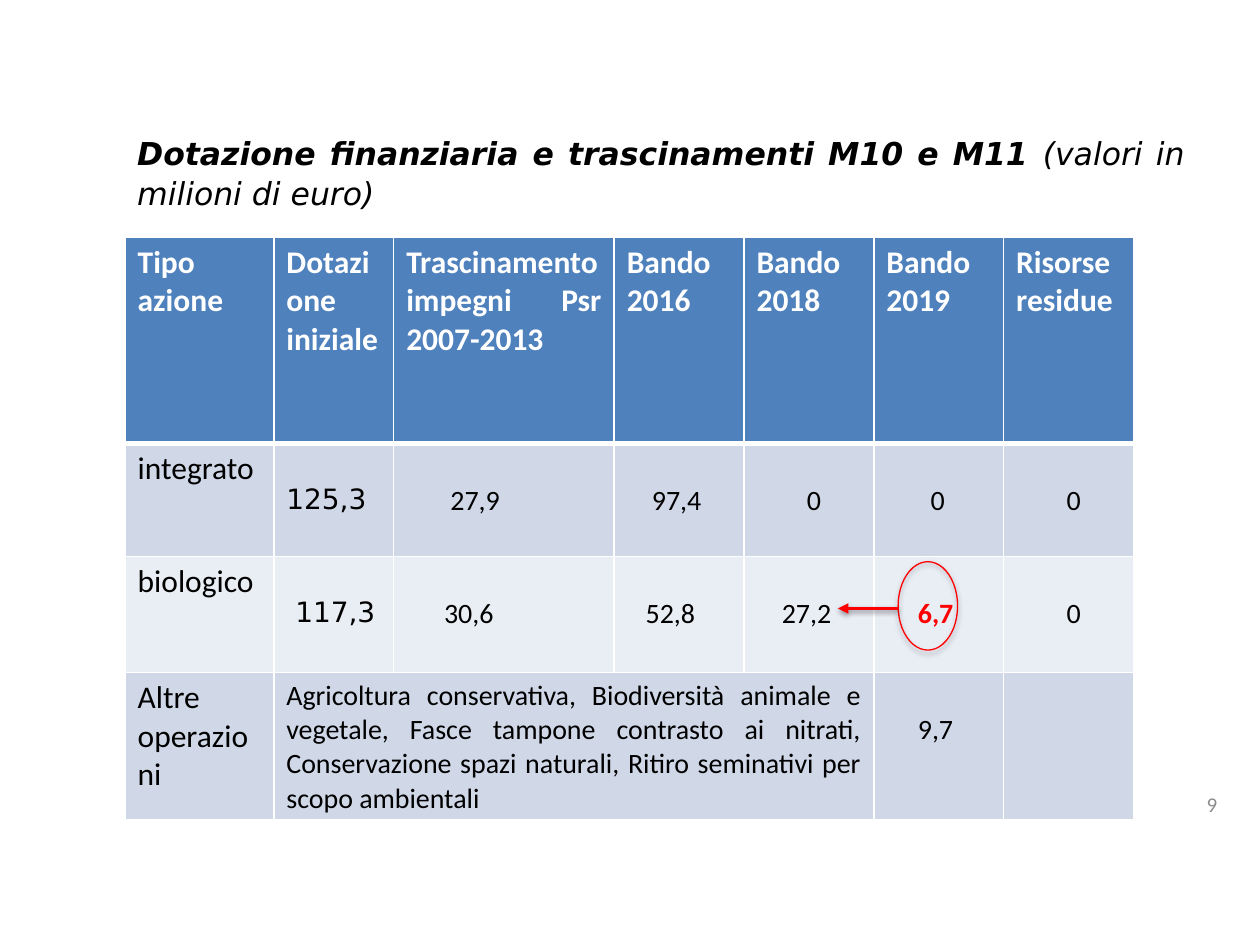
from dataclasses import dataclass
from lxml.etree import SubElement
from pptx import Presentation
from pptx.dml.color import RGBColor
from pptx.enum.shapes import MSO_CONNECTOR as Connector, MSO_SHAPE as Shape
from pptx.enum.text import MSO_ANCHOR as Anchor, PP_ALIGN as Align
from pptx.oxml import parse_xml
from pptx.oxml.ns import nsdecls, qn
from pptx.util import Pt


@dataclass(frozen=True)
class Theme:
    body: str = "Calibri"
    accent: str = "DejaVu Sans"
    black: str = "000000"
    white: str = "FFFFFF"
    grey: str = "8C8C8C"
    red: str = "FF0000"
    header: str = "4F81BD"
    bands: tuple = ("D0D8E8", "E9EDF4")
    large: int = 18
    normal: int = 16
    small: int = 12


theme = Theme()

# Content: each value is (text, indent in points)
TITLE = [("Dotazione finanziaria e trascinamenti M10 e M11 ", True),
         ("(valori in milioni di euro)", False)]
HEADERS = ["Tipo azione", "Dotazione iniziale", "Trascinamento impegni Psr 2007-2013",
           "Bando 2016", "Bando 2018", "Bando 2019", "Risorse residue"]
ACTIONS = [
    ("integrato", [("125,3", 0), ("27,9", 25.2), ("97,4", 14.4),
                   ("0", 28.8), ("0", 25.2), ("0", 28.8)]),
    ("biologico", [("117,3", 5.1), ("30,6", 21.6), ("52,8", 10.8),
                   ("27,2", 14.4), ("6,7", 18), ("0", 28.8)]),
]
OTHER_LABEL = "Altre operazioni"
OTHER_TEXT = ("Agricoltura conservativa, Biodiversità animale e vegetale, "
              "Fasce tampone contrasto ai nitrati, Conservazione spazi naturali, "
              "Ritiro seminativi per scopo ambientali")
OTHER_VALUE = ("9,7", 18)
HIGHLIGHT = "6,7"
PAGE_NUMBER = "9"

# Layout in points
TABLE_LEFT, TABLE_TOP = 71.5, 135.5
COLUMNS = [85, 68.5, 126] + [74.2] * 4
ROWS = [118, 64.5, 66.3, 84]
CELL_MARGIN = 7.2
VALUE_TOP = 23  # values sit on the second line of their cell


def add_span(para, text, size, color=theme.black, font=theme.body, bold=False, italic=False):
    span = para.add_run()
    span.text = text
    span.font.size, span.font.name = Pt(size), font
    span.font.bold, span.font.italic = bold, italic
    span.font.color.rgb = RGBColor.from_string(color)


def add_box(page, left, top, width, height, align):
    frame = page.shapes.add_textbox(Pt(left), Pt(top), Pt(width), Pt(height)).text_frame
    frame.word_wrap = True
    frame.paragraphs[0].alignment = align
    return frame


def set_borders(cell, top, bottom):
    props = cell._tc.get_or_add_tcPr()
    sides = [("L", 1), ("R", 1), ("T", top), ("B", bottom)]
    for index, (side, width) in enumerate(sides):
        props.insert(index, parse_xml(
            f'<a:ln{side} {nsdecls("a")} w="{Pt(width)}"><a:solidFill>'
            f'<a:srgbClr val="{theme.white}"/></a:solidFill></a:ln{side}>'))


def write_cell(cell, text, size, **style):
    para = cell.text_frame.paragraphs[0]
    para.alignment = Align.JUSTIFY
    add_span(para, text, size, **style)


def write_value(cell, value, font=theme.body):
    text, indent = value
    cell.margin_left, cell.margin_top = Pt(CELL_MARGIN + indent), Pt(VALUE_TOP)
    marked = text == HIGHLIGHT
    write_cell(cell, text, theme.normal, font=font, bold=marked,
               color=theme.red if marked else theme.black)


def style_mark(mark, width, opacity, distance):
    """Red outline with a soft shadow below."""
    mark.line.color.rgb = RGBColor.from_string(theme.red)
    mark.line.width = Pt(width)
    mark._element.spPr.append(parse_xml(
        f'<a:effectLst {nsdecls("a")}><a:outerShdw blurRad="{Pt(3.1)}" '
        f'dist="{Pt(distance)}" dir="5400000" rotWithShape="0">'
        f'<a:srgbClr val="{theme.black}"><a:alpha val="{opacity * 1000}"/></a:srgbClr>'
        f'</a:outerShdw></a:effectLst>'))


def add_table(page):
    table = page.shapes.add_table(len(ROWS), len(COLUMNS), Pt(TABLE_LEFT), Pt(TABLE_TOP),
                                  Pt(sum(COLUMNS)), Pt(sum(ROWS))).table
    for column, width in zip(table.columns, COLUMNS):
        column.width = Pt(width)
    for index, (row, height) in enumerate(zip(table.rows, ROWS)):
        row.height = Pt(height)
        color = theme.bands[(index - 1) % 2] if index else theme.header
        for cell in row.cells:
            cell.fill.solid()
            cell.fill.fore_color.rgb = RGBColor.from_string(color)
            set_borders(cell, 3 if index == 1 else 1, 3 if index == 0 else 1)

    # Header and the two main actions
    for index, text in enumerate(HEADERS):
        write_cell(table.cell(0, index), text, theme.large, color=theme.white, bold=True)
    for row, (label, values) in enumerate(ACTIONS, 1):
        write_cell(table.cell(row, 0), label, theme.large)
        for column, value in enumerate(values, 1):
            write_value(table.cell(row, column), value,
                        theme.accent if column == 1 else theme.body)

    # Other operations, with a merged description
    last = len(ROWS) - 1
    write_cell(table.cell(last, 0), OTHER_LABEL, theme.large)
    table.cell(last, 1).merge(table.cell(last, 4))
    write_cell(table.cell(last, 1), OTHER_TEXT, theme.normal)
    write_value(table.cell(last, 5), OTHER_VALUE)


def add_highlight(page):
    left, top, width, height = 513.2, 321, 34, 50.5
    ring = page.shapes.add_shape(Shape.OVAL, Pt(left), Pt(top), Pt(width), Pt(height))
    ring.fill.background()
    style_mark(ring, 0.75, 35, 1.8)

    arrow_y = 347.7
    arrow = page.shapes.add_connector(Connector.STRAIGHT, Pt(left), Pt(arrow_y),
                                      Pt(left - 34.4), Pt(arrow_y))
    style_mark(arrow, 2, 38, 1.6)
    SubElement(arrow.line._get_or_add_ln(), qn("a:tailEnd"), type="triangle")


def main():
    deck = Presentation()
    deck.slide_width, deck.slide_height = Pt(720), Pt(540)
    page = deck.slides.add_slide(deck.slide_layouts[6])

    # Page number
    number = add_box(page, 666.7, 440.6, 36, 38.2, Align.RIGHT)
    number.vertical_anchor = Anchor.MIDDLE
    add_span(number.paragraphs[0], PAGE_NUMBER, theme.small, theme.grey)

    # Title
    title = add_box(page, 71.3, 71.3, 612.7, 401.8, Align.JUSTIFY).paragraphs[0]
    title.line_spacing = 1.07
    for text, bold in TITLE:
        add_span(title, text, theme.large, font=theme.accent, bold=bold, italic=True)

    add_table(page)
    add_highlight(page)
    deck.save("out.pptx")


if __name__ == "__main__":
    main()
